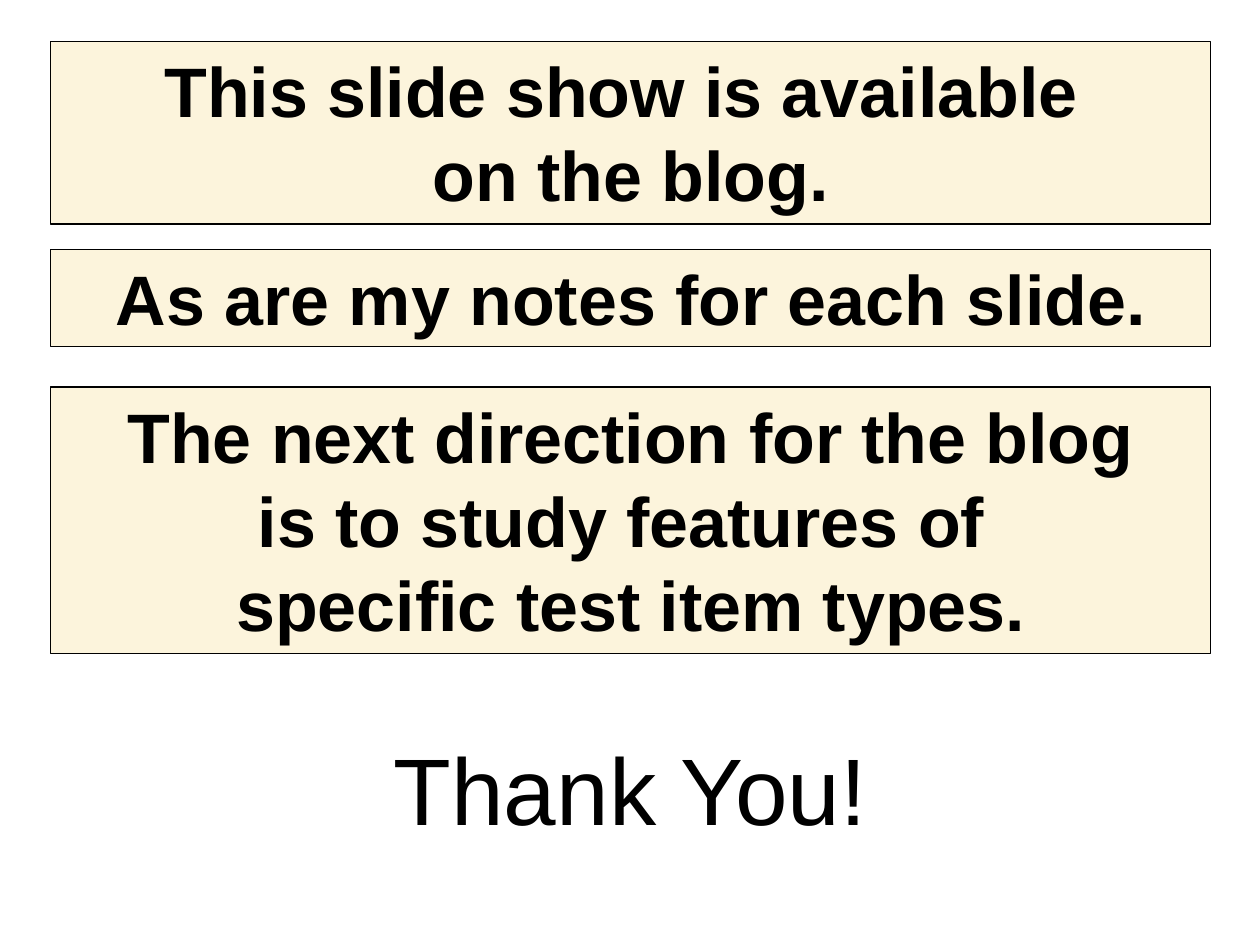
from dataclasses import dataclass

from lxml import etree
from pptx import Presentation
from pptx.dml.color import RGBColor
from pptx.enum import shapes, text
from pptx.oxml.ns import qn
from pptx.util import Cm, Pt

COLORS = {"ink": "000000", "cream": "FBEEC9"}
CREAM_OPACITY = 63
FONT = "Arial"
PANEL_LEFT, PANEL_WIDTH = Cm(1.02), Cm(23.39)


@dataclass
class Panel:
    top: float
    height: float
    paragraphs: list[str]  # \v is a line break


PANELS = [
    Panel(0.84, 3.68, ["This slide show is available \von the blog."]),
    Panel(5.03, 1.96, ["As are my notes for each slide."]),
    Panel(7.8, 5.38, ["The next direction for the blog",
                      "is to study features of \vspecific test item types."]),
]


def color(name: str) -> RGBColor:
    return RGBColor.from_string(COLORS[name])


def write(frame, paragraphs: list[str], size: int, bold: bool) -> None:
    frame.word_wrap = True
    frame.vertical_anchor = text.MSO_ANCHOR.TOP
    frame.text = "\n".join(paragraphs)
    for paragraph in frame.paragraphs:
        paragraph.alignment = text.PP_ALIGN.CENTER
        paragraph.font.name = FONT
        paragraph.font.size = Pt(size)
        paragraph.font.bold = bold
        paragraph.font.color.rgb = color("ink")


def draw_panel(slide, panel: Panel) -> None:
    box = slide.shapes.add_shape(shapes.MSO_SHAPE.RECTANGLE, PANEL_LEFT,
                                 Cm(panel.top), PANEL_WIDTH, Cm(panel.height))
    box.shadow.inherit = False
    box.fill.solid()
    box.fill.fore_color.rgb = color("cream")
    fill_color = box.fill._xPr.find(qn("a:solidFill"))[0]
    etree.SubElement(fill_color, qn("a:alpha"), val=str(CREAM_OPACITY * 1000))
    box.line.color.rgb = color("ink")
    box.line.width = Pt(0.75)
    write(box.text_frame, panel.paragraphs, size=40, bold=True)


def main() -> None:
    deck = Presentation()
    deck.slide_width, deck.slide_height = Cm(25.4), Cm(19.05)
    slide = deck.slides.add_slide(deck.slide_layouts[5])

    # Closing words
    thanks = slide.shapes.title
    thanks.left, thanks.top = Cm(1.96), Cm(14.6)
    thanks.width, thanks.height = Cm(21.49), Cm(3.33)
    write(thanks.text_frame, ["Thank You!"], size=54, bold=False)

    # Announcement panels
    for panel in PANELS:
        draw_panel(slide, panel)

    deck.save("out.pptx")


if __name__ == "__main__":
    main()
